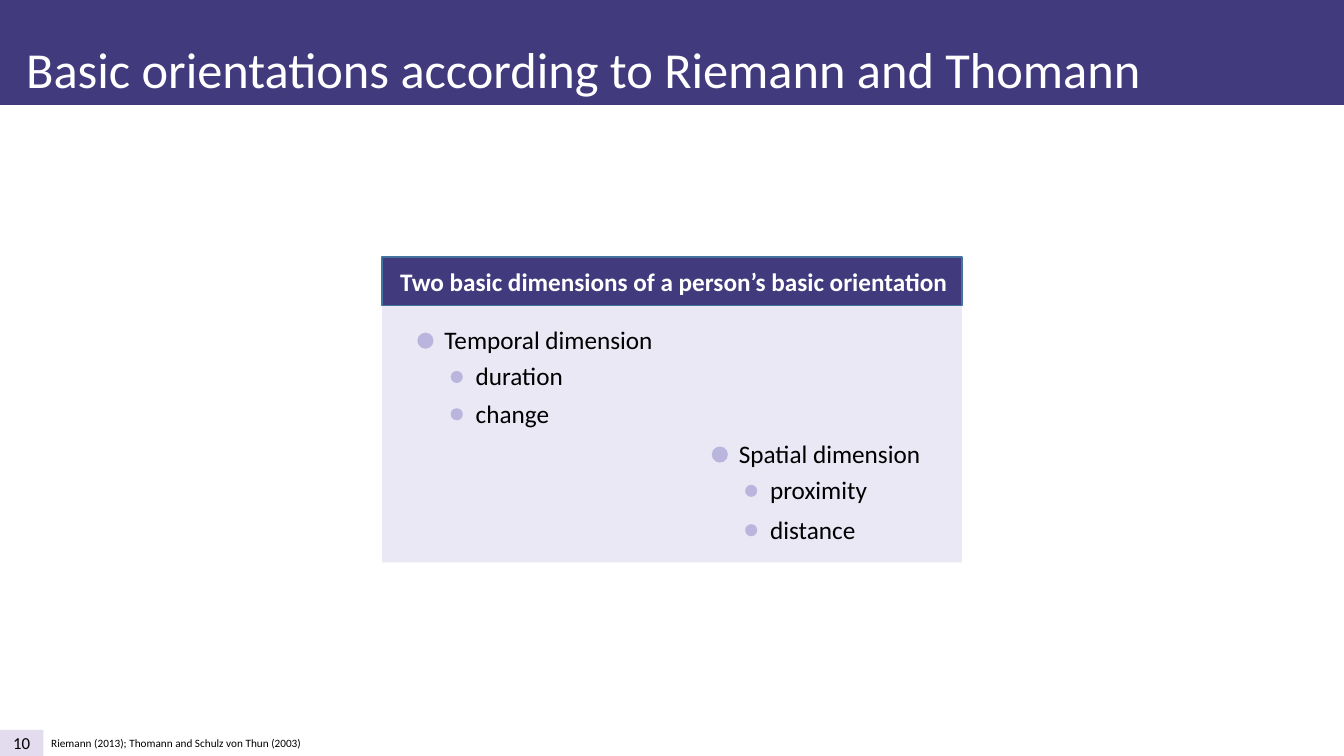
import pptx
import pptx.dml.color
import pptx.enum.shapes
import pptx.enum.text
import pptx.util

Inches = pptx.util.Inches
RGBColor = pptx.dml.color.RGBColor
MSO_SHAPE = pptx.enum.shapes.MSO_SHAPE
PP_ALIGN = pptx.enum.text.PP_ALIGN
MSO_ANCHOR = pptx.enum.text.MSO_ANCHOR

# Content
TITLE = "Basic orientations according to Riemann and Thomann"
PANEL_HEADING = "Two basic dimensions of a person’s basic orientation"
SOURCE_NOTE = "Riemann (2013); Thomann and Schulz von Thun (2003)"
PAGE_NUMBER = "10"
# Each dimension: left edge, then (text, level, top)
DIMENSIONS = [
    (4.31, [("Temporal dimension", 0, 3.17),
            ("duration", 1, 3.53),
            ("change", 1, 3.90)]),
    (7.23, [("Spatial dimension", 0, 4.30),
            ("proximity", 1, 4.66),
            ("distance", 1, 5.05)]),
]

# Look
FONT = "Calibri"
PURPLE = RGBColor(0x41, 0x3A, 0x7D)
PANEL_FILL = RGBColor(0xE9, 0xE8, 0xF4)
NUMBER_FILL = RGBColor(0xE2, 0xDC, 0xEE)
HEADING_LINE = RGBColor(0x43, 0x73, 0x9E)
DOT_FILL = RGBColor(0xB9, 0xB5, 0xDD)
WHITE = RGBColor(0xFF, 0xFF, 0xFF)
BLACK = RGBColor(0, 0, 0)
INDENT = 0.31
ROW_HEIGHT = 0.4
# Per level: dot size, gap from dot to text box, text box width
LEVELS = [(0.16, 0.01, 2.29), (0.12, 0.03, 1.17)]


def place(shape, left, top, width, height):
    shape.left, shape.top = Inches(left), Inches(top)
    shape.width, shape.height = Inches(width), Inches(height)


def write(shape, text, size, color=BLACK, bold=False,
          align=PP_ALIGN.LEFT, anchor=MSO_ANCHOR.TOP):
    frame = shape.text_frame
    frame.word_wrap = False
    frame.vertical_anchor = anchor
    paragraph = frame.paragraphs[0]
    paragraph.alignment = align
    run = paragraph.add_run()
    run.text = text
    run.font.name = FONT
    run.font.size = pptx.util.Pt(size)
    run.font.bold = bold
    run.font.color.rgb = color


def add_filled(shapes, kind, box, fill, line=None):
    shape = shapes.add_shape(kind, *map(Inches, box))
    shape.shadow.inherit = False
    shape.fill.solid()
    shape.fill.fore_color.rgb = fill
    if line is None:
        shape.line.fill.background()
    else:
        shape.line.color.rgb = line
        shape.line.width = pptx.util.Pt(1)
    return shape


def add_text(shapes, box, text, size, color=BLACK, bold=False):
    write(shapes.add_textbox(*map(Inches, box)), text, size, color, bold)


def add_dimension(shapes, left, rows):
    for text, level, top in rows:
        dot, gap, width = LEVELS[level]
        text_left = left + level * INDENT
        add_text(shapes, (text_left, top, width, ROW_HEIGHT), text, 18)
        dot_top = top + 0.01 + (ROW_HEIGHT - dot) / 2
        add_filled(shapes, MSO_SHAPE.OVAL,
                   (text_left - gap - dot, dot_top, dot, dot), DOT_FILL)


def main():
    presentation = pptx.Presentation()
    presentation.slide_width = Inches(13.33)
    presentation.slide_height = Inches(7.5)
    slide = presentation.slides.add_slide(presentation.slide_layouts[5])
    shapes = slide.shapes

    # Page number and title bar
    number = add_filled(shapes, MSO_SHAPE.RECTANGLE,
                        (0, 7.24, 0.43, 0.26), NUMBER_FILL)
    write(number, PAGE_NUMBER, 12, align=PP_ALIGN.CENTER,
          anchor=MSO_ANCHOR.MIDDLE)
    bar = add_filled(shapes, MSO_SHAPE.RECTANGLE,
                     (0, -0.01, 13.34, 1.05), PURPLE)

    # Title, brought in front of its bar
    title = shapes.title
    place(title, 0.16, 0.33, 11.59, 0.71)
    write(title, TITLE, 36, WHITE)
    bar.element.addnext(title.element)

    # Panel with heading and the two dimensions
    panel = shapes.add_group_shape().shapes
    add_filled(panel, MSO_SHAPE.RECTANGLE,
               (3.79, 2.56, 5.75, 3.02), PANEL_FILL)
    add_filled(panel, MSO_SHAPE.RECTANGLE,
               (3.79, 2.55, 5.75, 0.48), PURPLE, HEADING_LINE)
    add_text(panel, (3.87, 2.59, 5.67, 0.4), PANEL_HEADING, 18, WHITE, True)
    for left, rows in DIMENSIONS:
        add_dimension(panel, left, rows)

    # Source note
    add_text(shapes, (0.41, 7.26, 2.72, 0.24), SOURCE_NOTE, 8)

    presentation.save("out.pptx")


if __name__ == "__main__":
    main()
